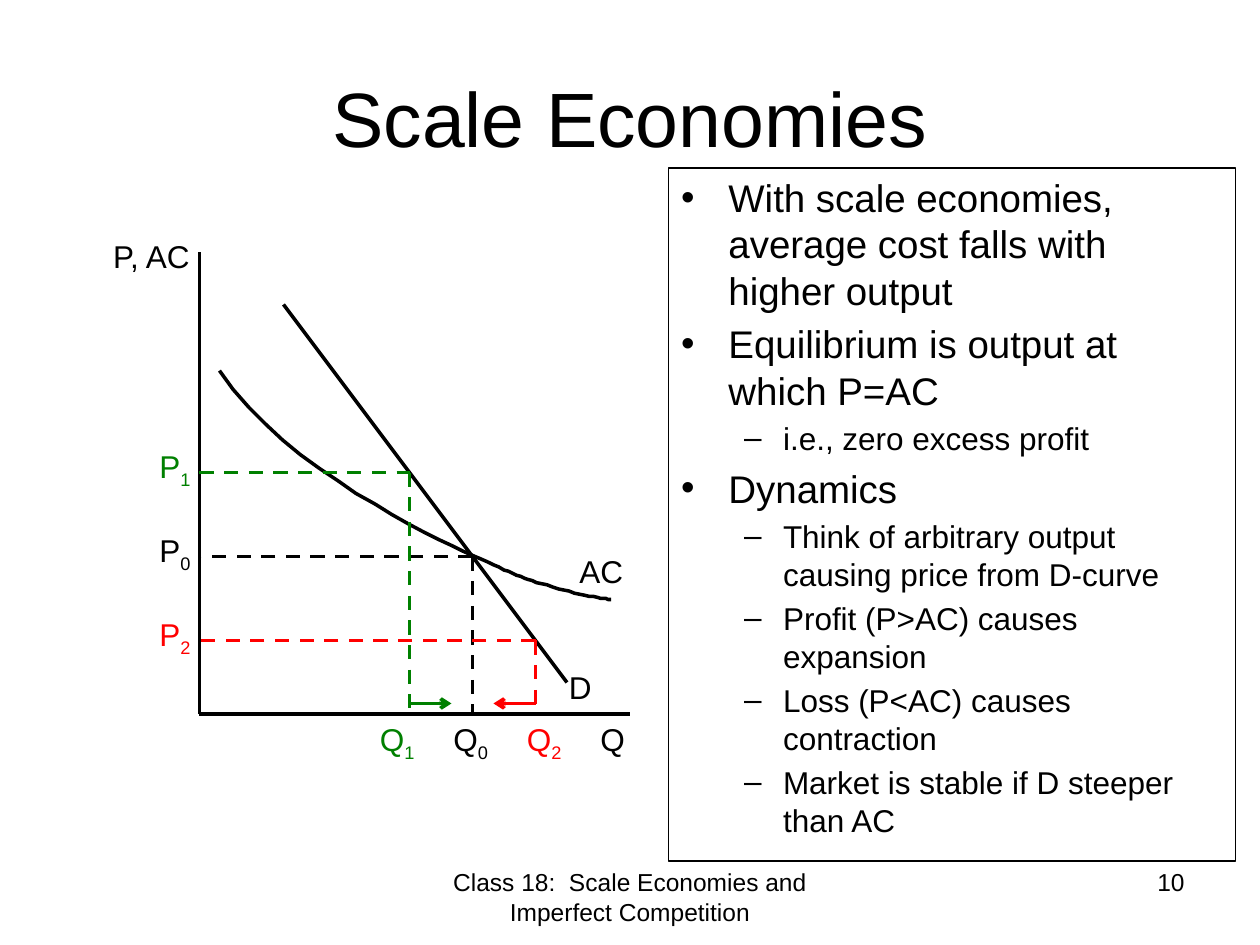
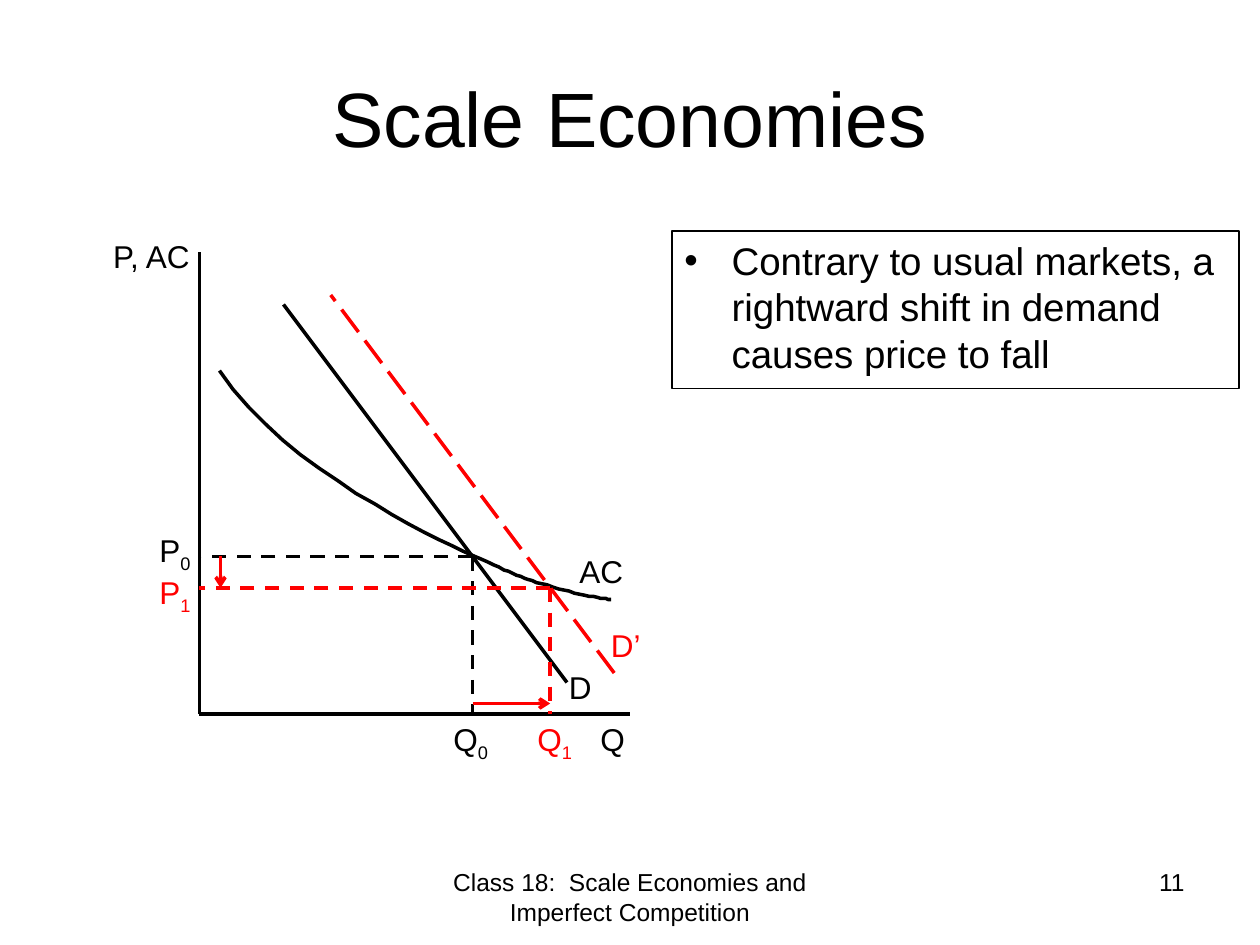
from dataclasses import dataclass

from lxml import etree
from pptx import Presentation
from pptx.dml.color import RGBColor
from pptx.enum.dml import MSO_LINE
from pptx.enum.shapes import MSO_CONNECTOR, MSO_SHAPE
from pptx.enum.text import MSO_ANCHOR, MSO_AUTO_SIZE, PP_ALIGN
from pptx.oxml.ns import qn
from pptx.util import Emu, Pt

DASH, LONG = MSO_LINE.DASH, MSO_LINE.LONG_DASH
LEFT, MID, RIGHT = PP_ALIGN.LEFT, PP_ALIGN.CENTER, PP_ALIGN.RIGHT
TOP, CENTER = MSO_ANCHOR.TOP, MSO_ANCHOR.MIDDLE
GROW, FIXED = MSO_AUTO_SIZE.SHAPE_TO_FIT_TEXT, MSO_AUTO_SIZE.NONE
RECT, STRAIGHT = MSO_SHAPE.RECTANGLE, MSO_CONNECTOR.STRAIGHT
PX = 7620


@dataclass(frozen=True)
class Theme:
    """Colours, type sizes and line widths of the deck."""
    font: str = "Arial"
    ink: str = "000000"
    green: str = "008000"
    red: str = "FF0000"
    title: int = 44
    body: tuple = (22, 18)
    label: int = 18
    foot: int = 14
    line: float = 2
    edge: float = 0.75


THEME = Theme()
ORIGIN = (190, 680)
DEMAND = ((540, 650), (270, 290))
COST = (
    ((209, 353), (276, 450), (409, 509), (450, 529)),
    ((450, 529), (491, 548), (496, 550), (526, 559)),
    ((526, 559), (556, 568), (582, 571), (582, 571)),
)
BULLETS = (("•", 45, 45), ("–", 97, 37))
FOOTER = "Class 18:  Scale Economies and Imperfect Competition"


def px(*nums):
    """Turn px lengths into EMU."""
    return [Emu(num * PX) for num in nums]


def put(item, **vals):
    """Set each format value on an item."""
    for name, val in vals.items():
        setattr(item, name, val)


def bend(part, steps=16):
    """Return the points along one cubic curve."""
    weights = [((1 - t) ** 3, 3 * t * (1 - t) ** 2, 3 * t * t * (1 - t), t ** 3)
               for t in (step / steps for step in range(1, steps + 1))]
    return [tuple(sum(w * spot[axis] for w, spot in zip(row, part)) for axis in (0, 1))
            for row in weights]


class Board:
    """Draws styled elements on the current slide."""

    def __init__(self, deck, theme):
        """Hold the deck and its theme."""
        self.deck, self.theme, self.slide = deck, theme, None

    def start(self, title, page):
        """Add a slide with its title and footers."""
        self.slide = self.deck.slides.add_slide(self.deck.slide_layouts[5])
        head = self.slide.shapes.title
        put(head, **dict(zip(("left", "top", "width", "height"), px(60, 36, 1080, 150))))
        put(head.text_frame, vertical_anchor=CENTER, word_wrap=True, auto_size=FIXED)
        self.words(head.text_frame.paragraphs[0], title, self.theme.title, align=MID)
        self.text(FOOTER, (410, 820, 380, 62), self.theme.foot, align=MID, fit=FIXED)
        self.text(str(page), (860, 820, 280, 62), self.theme.foot, align=RIGHT, fit=FIXED)

    def words(self, para, text, size, color=None, sub="", align=LEFT):
        """Fill a paragraph, with an optional subscript."""
        para.alignment = align
        for part in filter(None, (text, sub)):
            run = para.add_run()
            run.text = part
            put(run.font, name=self.theme.font, size=Pt(size))
            run.font.color.rgb = RGBColor.from_string(color or self.theme.ink)
        if sub:
            run._r.get_or_add_rPr().set("baseline", "-25000")

    def text(self, text, area, size=None, color=None, sub="", align=LEFT, fit=GROW):
        """Add a text box."""
        frame = self.slide.shapes.add_textbox(*px(*area)).text_frame
        put(frame, word_wrap=True, auto_size=fit, vertical_anchor=TOP)
        self.words(frame.paragraphs[0], text, size or self.theme.label, color, sub, align)

    def label(self, text, x, y, color=None, sub="", width=70):
        """Add a graph label."""
        self.text(text, (x, y, width, 48), color=color, sub=sub)

    def stroke(self, shape, color=None, width=None, dash=None):
        """Style the outline of a shape or line."""
        put(shape.line, width=Pt(width or self.theme.line), dash_style=dash)
        shape.line.color.rgb = RGBColor.from_string(color or self.theme.ink)

    def line(self, start, end, color=None, dash=None, arrow=False):
        """Add a straight line or an arrow."""
        link = self.slide.shapes.add_connector(STRAIGHT, *px(*start, *end))
        self.stroke(link, color, dash=dash)
        if arrow:
            etree.SubElement(link.line._get_or_add_ln(), qn("a:tailEnd"), type="arrow")
        etree.SubElement(link._element.spPr, qn("a:effectLst"))

    def curve(self, parts):
        """Add an open smooth curve."""
        pen = self.slide.shapes.build_freeform(*parts[0][0], scale=PX)
        pen.add_line_segments([spot for part in parts for spot in bend(part)], close=False)
        shape = pen.convert_to_shape()
        shape.shadow.inherit = False
        shape.fill.background()
        self.stroke(shape)

    def notes(self, area, items):
        """Add a framed bullet list of level and text pairs."""
        box = self.slide.shapes.add_shape(RECT, *px(*area))
        box.shadow.inherit = False
        box.fill.background()
        self.stroke(box, width=self.theme.edge)
        frame = box.text_frame
        put(frame, word_wrap=True, vertical_anchor=TOP)
        for spot, (level, text) in enumerate(items):
            para = frame.add_paragraph() if spot else frame.paragraphs[0]
            size = self.theme.body[level]
            self.words(para, text, size)
            put(para, level=level, space_before=Pt(size * 0.2))
            mark, margin, hang = BULLETS[level]
            props = para._p.get_or_add_pPr()
            props.set("marL", str(margin * PX))
            props.set("indent", str(-hang * PX))
            etree.SubElement(props, qn("a:buFont"), typeface=self.theme.font)
            etree.SubElement(props, qn("a:buChar"), char=mark)

    def guide(self, sub, point, names, color=None, inward=True):
        """Drop dashed lines from a point to both axes and name the ends."""
        (x, y), (left, top) = point, names
        ends = (point, (ORIGIN[0], y))
        self.line(*(ends if inward else ends[::-1]), color, DASH)
        self.line(point, (x, ORIGIN[1]), color, DASH)
        self.label("Q", left, 680, color, sub)
        self.label("P", 140, top, color, sub)

    def graph(self):
        """Draw the axes, demand, cost and first balance."""
        self.line(ORIGIN, (600, 680))
        self.line(ORIGIN, (190, 240))
        self.label("P, AC", 96, 220, width=134)
        self.label("Q", 560, 680)
        self.line(*DEMAND)
        self.label("D", 530, 630)
        self.label("AC", 540, 520)
        self.guide("0", (450, 530), (420, 500))
        self.curve(COST)


def stable(board):
    """Build the slide on balance and its dynamics."""
    board.start("Scale Economies", 10)
    board.graph()
    board.guide("1", (390, 450), (350, 420), THEME.green, inward=False)
    board.guide("2", (510, 610), (490, 580), THEME.red)
    board.line((510, 670), (470, 670), THEME.red, arrow=True)
    board.line((390, 670), (430, 670), THEME.green, arrow=True)
    board.notes((637, 160, 540, 660), (
        (0, "With scale economies, average cost falls with higher output"),
        (0, "Equilibrium is output at which P=AC"),
        (1, "i.e., zero excess profit"),
        (0, "Dynamics"),
        (1, "Think of arbitrary output causing price from D-curve"),
        (1, "Profit (P>AC) causes expansion"),
        (1, "Loss (P<AC) causes contraction"),
        (1, "Market is stable if D steeper than AC"),
    ))


def shift(board):
    """Build the slide on a rise in demand."""
    board.start("Scale Economies", 11)
    board.graph()
    board.guide("1", (524, 560), (500, 540), THEME.red)
    board.line((450, 670), (524, 670), THEME.red, arrow=True)
    board.line((210, 530), (210, 560), THEME.red, arrow=True)
    board.line(*[(x + 45, y - 9) for x, y in DEMAND], THEME.red, LONG)
    board.label("D’", 570, 590, THEME.red, width=60)
    board.notes((640, 220, 540, 150), (
        (0, "Contrary to usual markets, a rightward shift in demand causes price to fall"),
    ))


def main():
    """Build and save the deck."""
    deck = Presentation()
    put(deck, **dict(zip(("slide_width", "slide_height"), px(1200, 900))))
    board = Board(deck, THEME)
    stable(board)
    shift(board)
    deck.save("out.pptx")


if __name__ == "__main__":
    main()
